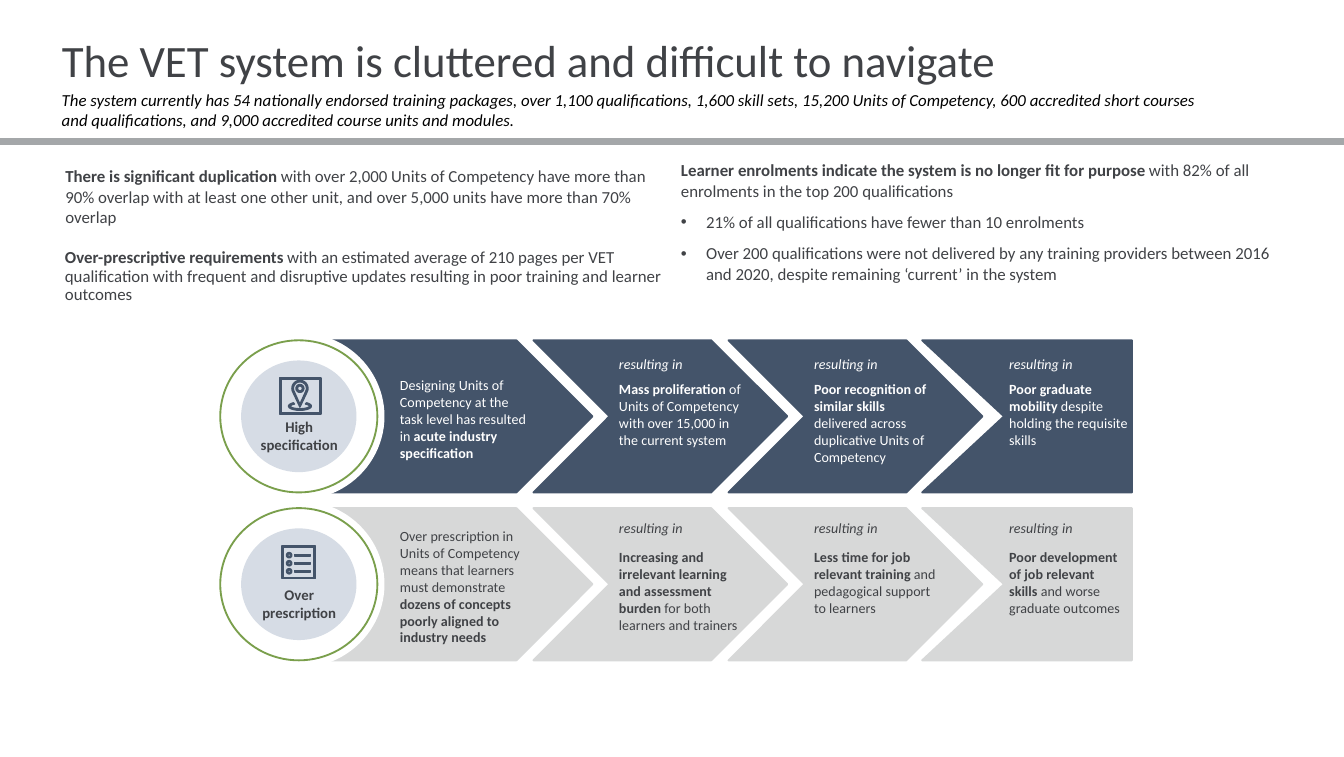
import math

import lxml.etree
import pptx
import pptx.dml.color
import pptx.enum.shapes
import pptx.enum.text
import pptx.oxml.ns
import pptx.util

Pt = pptx.util.Pt
RGBColor = pptx.dml.color.RGBColor
SHAPE = pptx.enum.shapes.MSO_SHAPE
ANCHOR = pptx.enum.text.MSO_ANCHOR
ALIGN = pptx.enum.text.PP_ALIGN

INK = RGBColor(0x40, 0x42, 0x46)
BLACK = RGBColor(0, 0, 0)
WHITE = RGBColor(0xFF, 0xFF, 0xFF)
NAVY = RGBColor(0x44, 0x54, 0x6A)
SILVER = RGBColor(0xD7, 0xD8, 0xD8)
RULE_GREY = RGBColor(0xA4, 0xA7, 0xA9)
GREEN = RGBColor(0x7A, 0x9F, 0x4C)
PALE_BLUE = RGBColor(0xD6, 0xDC, 0xE5)

NBSP = chr(160)  # no-break space
BAND_HEIGHT = 81.5
STEP = 104.5  # distance between neighbouring chevrons
CHEVRON_LEFT = 285.8
TEXT_LEFT = 326.2
PADDING = (5.4, 3)


class SlideWriter:
    font_name = "Calibri"

    def __init__(self, page):
        self.page = page

    def text(self, left, top, width, height, paragraphs, size, colour=INK, inset=(0, 0),
             anchor=ANCHOR.TOP, align=None, line_spacing=None, bullets_from=None):
        """Each paragraph is a list of (words, style) with style "", "b" or "i"."""
        box = self.page.shapes.add_textbox(Pt(left), Pt(top), Pt(width), Pt(height))
        frame = box.text_frame
        frame.word_wrap = True
        frame.vertical_anchor = anchor
        frame.margin_left = frame.margin_right = Pt(inset[0])
        frame.margin_top = frame.margin_bottom = Pt(inset[1])
        for number, spans in enumerate(paragraphs):
            para = frame.add_paragraph() if number else frame.paragraphs[0]
            para.alignment = align
            para.line_spacing = line_spacing
            if number:
                para.space_before = Pt(6)
            if bullets_from is not None and number >= bullets_from:
                self.bullet(para)
            para.font.name = self.font_name
            para.font.size = Pt(size)
            para.font.color.rgb = colour
            for words, style in spans:
                span = para.add_run()
                span.text = words
                target = para.font if len(spans) == 1 else span.font
                if style:
                    target.bold = style == "b"
                    target.italic = style == "i"

    def bullet(self, para):
        properties = para._p.get_or_add_pPr()
        properties.set("marL", str(Pt(13.5)))
        properties.set("indent", str(-Pt(13.5)))
        for tag, name, value in (("a:buFont", "typeface", "Arial"), ("a:buChar", "char", "•")):
            lxml.etree.SubElement(properties, pptx.oxml.ns.qn(tag)).set(name, value)

    def paint(self, shape, fill, line, weight):
        shape.shadow.inherit = False
        shape.fill.solid()
        shape.fill.fore_color.rgb = fill
        if line is None:
            shape.line.fill.background()
        else:
            shape.line.color.rgb = line
            shape.line.width = Pt(weight)

    def shape(self, kind, left, top, width, height, fill, line=None):
        shape = self.page.shapes.add_shape(kind, Pt(left), Pt(top), Pt(width), Pt(height))
        self.paint(shape, fill, line, 1)

    def outline(self, contours, colour, weight):
        """Draw closed contours as one filled shape."""
        builder = None
        for contour in contours:
            points = [(Pt(x), Pt(y)) for x, y in contour]
            if builder is None:
                builder = self.page.shapes.build_freeform(*points[0])
            else:
                builder.move_to(*points[0])
            builder.add_line_segments(points[1:], close=True)
        self.paint(builder.convert_to_shape(), colour, colour, weight)


def arc(x, y, radius_x, radius_y, start=0, end=345, steps=23):
    angles = [math.radians(start + (end - start) * i / steps) for i in range(steps + 1)]
    return [(x + radius_x * math.cos(a), y + radius_y * math.sin(a)) for a in angles]


def rectangle(left, top, right, bottom):
    return [(left, top), (right, top), (right, bottom), (left, bottom)]


def frame_contours(left, top, right, bottom, edge=0.8):
    return [rectangle(left, top, right, bottom),
            rectangle(left + edge, top + edge, right - edge, bottom - edge)]


def map_icon():
    x, y = 160.7, 208
    contours = frame_contours(149.7, 202.4, 171.9, 221.7)
    contours += [arc(x, y, radius, radius) for radius in (2.1, 1.3)]
    for radius, tip in ((4.3, 218), (3.5, 216.5)):  # pin
        contours.append(arc(x, y, radius, radius, 160, 380) + [(x, tip)])
    base = arc(x, 217.5, 6.1, 2.2, -55, 235)
    contours.append(base + arc(x, 217.5, 5.1, 1.4, 235, -55))
    return contours


def checklist_icon():
    contours = frame_contours(151, 292.3, 169, 309.9)
    for y in (297.3, 301.6, 305.9):
        contours += [arc(154.9, y, radius, radius) for radius in (1.4, 0.7)]
        contours.append(rectangle(157.7, y - 0.4, 166.3, y + 0.4))
    return contours


def draw_band(writer, top, colour, ink, label, icon, cause, effects, lead_top, last_width):
    # Last block, first block and the round badge
    left, right, bottom = CHEVRON_LEFT + 2 * STEP - 0.8, 606.4, top + BAND_HEIGHT
    writer.outline([[(left, top), (right, top), (right, bottom), (left, bottom),
                     (left + 43.9, top + BAND_HEIGHT / 2)]], colour, 1)
    writer.shape(SHAPE.PENTAGON, 167.8, top, 149.6, BAND_HEIGHT, colour, colour)
    for width, height, fill, line in ((90.8, 88.6, WHITE, WHITE),
                                      (84.2, BAND_HEIGHT, WHITE, GREEN),
                                      (61.8, 59.8, PALE_BLUE, None)):
        writer.shape(SHAPE.OVAL, 160.1 - width / 2, top + (BAND_HEIGHT - height) / 2,
                     width, height, fill, line)
    writer.text(129.3, top + 38.5, 62, 24.5, [[(label, "b")]], 7.9,
                inset=PADDING, align=ALIGN.CENTER)
    writer.outline(icon, NAVY, 0.75)

    # Middle chevrons
    for column in range(2):
        writer.shape(SHAPE.CHEVRON, CHEVRON_LEFT + column * STEP, top, 136, BAND_HEIGHT,
                     colour, colour)

    # Cause and its effects
    writer.text(208.8, top + 19.1, 82.4, 46, [cause], 7.5, ink, PADDING, ANCHOR.MIDDLE)
    for column, effect in enumerate(effects):
        left = TEXT_LEFT + column * STEP
        width = last_width if column == 2 else 77
        writer.text(left, top + lead_top, 56, 14.4, [[("resulting in", "i")]], 7.5, ink, PADDING)
        writer.text(left, top + 18.7, width, 51, [effect], 7.5, ink, PADDING)


def main():
    deck = pptx.Presentation()
    deck.slide_width, deck.slide_height = Pt(720), Pt(405.36)
    writer = SlideWriter(deck.slides.add_slide(deck.slide_layouts[6]))

    # Heading
    writer.text(27.7, 15.7, 575, 32, [[("The VET system is cluttered and difficult to navigate", "")]],
                24, inset=(5.4, 5.4), anchor=ANCHOR.MIDDLE)
    writer.text(27.7, 42.7, 668, 32.4, [[(
        f"The system currently has 54 nationally endorsed{NBSP}training packages, over 1,100 "
        f"qualifications, 1,600 skill{NBSP}sets, 15,200 Units of Competency, 600 accredited short "
        f"courses and{NBSP}qualifications, and{NBSP}9,000 accredited course units and modules.",
        "i")]], 9, BLACK, (5.4, 5.4))
    writer.shape(SHAPE.RECTANGLE, 0, 74.4, 720, 2.8, RULE_GREY, RULE_GREY)

    # Findings
    writer.text(35, 88.9, 325.4, 34, [[
        ("There is significant duplication ", "b"),
        ("with over 2,000 Units of Competency have more than 90% overlap with at least one "
         "other unit, and over 5,000 units have more than 70% overlap", "")]], 9)
    writer.text(34.8, 133.5, 327, 34, [[
        ("Over-prescriptive requirements", "b"),
        (" with an estimated average of 210 pages per VET qualification with frequent and "
         "disruptive updates resulting in poor training and learner outcomes", "")]],
        9, line_spacing=0.9)
    writer.text(364.8, 85.7, 326, 82, [
        [("Learner enrolments indicate the system is no longer fit for purpose ", "b"),
         ("with 82% of all enrolments in the top 200 qualifications", "")],
        [("21% of all qualifications have fewer than 10 enrolments", "")],
        [("Over 200 qualifications were not delivered by any training providers between 2016 "
          "and 2020, despite remaining ‘current’ in the system", "")]], 9, bullets_from=1)

    # Consequence chains
    draw_band(writer, 272.1, SILVER, INK, "Over prescription", checklist_icon(),
              [("Over prescription in Units of Competency means that learners must demonstrate ", ""),
               (f"dozens of concepts poorly aligned to industry needs{NBSP}", "b")],
              [[("Increasing and irrelevant learning and assessment burden", "b"),
                (f" for both learners and trainers{NBSP}", "")],
               [("Less time for job relevant training", "b"),
                (" and pedagogical support to learners", "")],
               [("Poor development of job relevant skills ", "b"),
                (f"and worse graduate outcomes{NBSP}", "")]], 2.9, 72.6)
    draw_band(writer, 182.2, NAVY, WHITE, "High specification", map_icon(),
              [("Designing Units of Competency at the task level has resulted in ", ""),
               ("acute industry specification", "b")],
              [[("Mass proliferation ", "b"),
                ("of Units of Competency with over 15,000 in the current system", "")],
               [("Poor recognition of similar skills", "b"),
                (f" delivered across duplicative Units of Competency{NBSP}", "")],
               [("Poor graduate mobility", "b"),
                (" despite holding the requisite skills", "")]], 5.4, 76)

    deck.save("out.pptx")


if __name__ == "__main__":
    main()
